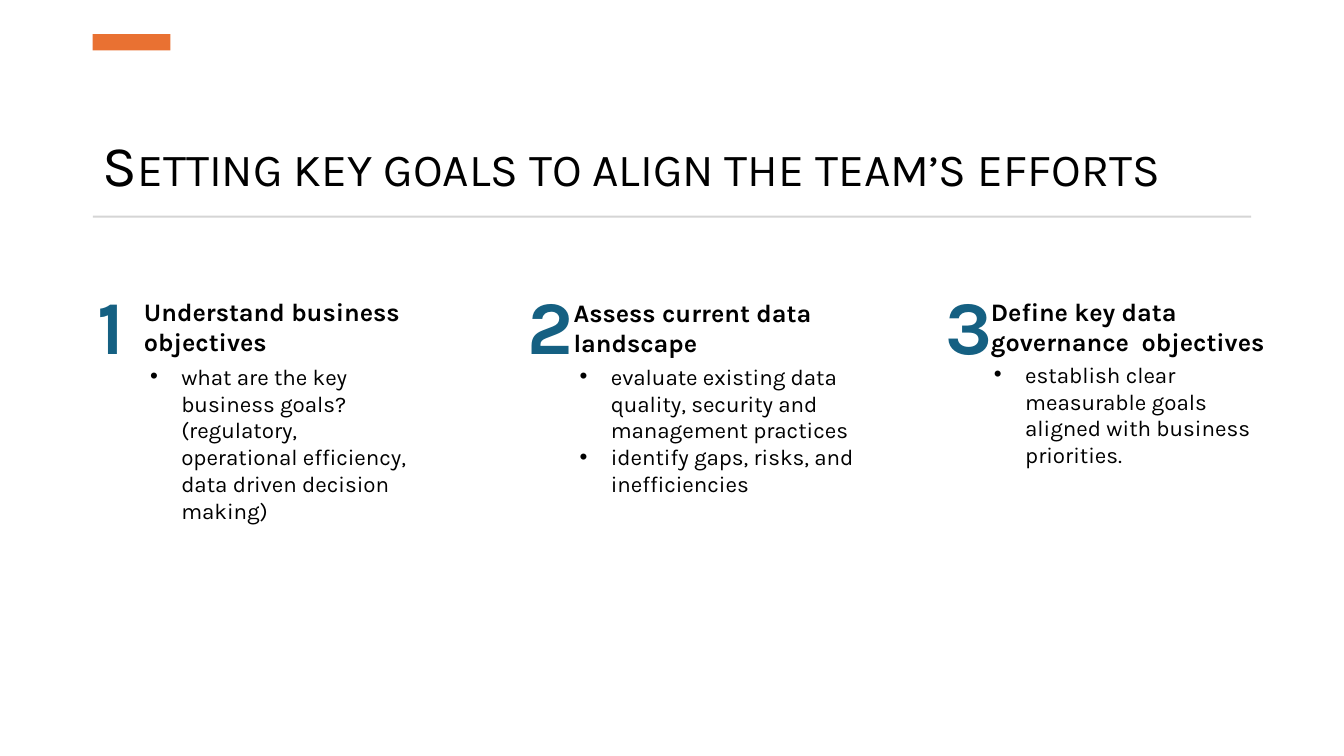
from pptx import Presentation
from pptx.dml.color import RGBColor as RGB
from pptx.enum.shapes import MSO_SHAPE as SHAPE
from pptx.enum.text import MSO_ANCHOR as ANCHOR
from pptx.oxml.ns import qn
from pptx.util import Inches, Pt
from lxml import etree

COLORS = {"text": "000000", "number": "156082", "accent": "E97132", "rule": "D5D5D5"}

# number left, heading (left, top, width), bullets (left, top, width, height)
GOALS = [
    (0.87, (1.33, 2.89, 3.8), "Understand business objectives", (0.89, 3.55, 3.33, 1.45),
     ["what are the key business goals? (regulatory, operational efficiency, "
      "data driven decision making)"]),
    (5.13, (5.59, 2.9, 3.69), "Assess current data landscape", (5.15, 3.55, 3.8, 1.45),
     ["evaluate existing data quality, security and management practices",
      "identify gaps, risks, and inefficiencies"]),
    (9.28, (9.73, 2.89, 3.19), "Define key data governance  objectives",
     (9.26, 3.53, 3.52, 0.91),
     ["establish clear measurable goals aligned with business priorities."]),
]


class SlideBuilder:
    font = "Karla"

    def __init__(self, slide):
        self.s = slide

    def bar(self, x, y, w, h, color):
        sp = self.s.shapes.add_shape(SHAPE.RECTANGLE, *map(Inches, (x, y, w, h)))
        sp.shadow.inherit = False
        sp.fill.solid()
        sp.fill.fore_color.rgb = RGB.from_string(COLORS[color])
        sp.line.fill.background()

    def text(self, x, y, w, h, paragraphs, size, color="text", bold=False):
        """Add a wrapped text box with one run per paragraph; return its frame."""
        tf = self.s.shapes.add_textbox(*map(Inches, (x, y, w, h))).text_frame
        tf.word_wrap = True
        for i, words in enumerate(paragraphs):
            p = tf.paragraphs[0] if i == 0 else tf.add_paragraph()
            r = p.add_run()
            r.text = words
            r.font.name = self.font
            r.font.size = Pt(size)
            r.font.bold = bold
            r.font.color.rgb = RGB.from_string(COLORS[color])
        return tf

    def title(self, x, y, w, h, words):
        tf = self.text(x, y, w, h, [words], 41)
        tf.vertical_anchor = ANCHOR.BOTTOM
        p = tf.paragraphs[0]
        p.line_spacing = 0.9
        p.runs[0].font._element.set("cap", "small")

    def bullets(self, x, y, w, h, items):
        tf = self.text(x, y, w, h, items, 16)
        for p in tf.paragraphs:
            p.level = 1
            pPr = p._p.get_or_add_pPr()
            pPr.set("marL", str(Inches(0.81)))
            pPr.set("indent", str(Inches(-0.31)))
            etree.SubElement(pPr, qn("a:buFont"), typeface="Arial")
            etree.SubElement(pPr, qn("a:buChar"), char="•")

    def goal(self, number, number_left, heading_at, heading, bullets_at, items):
        self.text(number_left, 2.72, 0.91, 1.01, [str(number)], 54, "number", True)
        self.text(*heading_at, 0.71, [heading], 18, bold=True)
        self.bullets(*bullets_at, items)


def main():
    prs = Presentation()
    prs.slide_width, prs.slide_height = Inches(13.33), Inches(7.5)
    b = SlideBuilder(prs.slides.add_slide(prs.slide_layouts[6]))
    b.title(0.92, 0.75, 11.49, 1.27, "Setting key goals to align the team’s efforts")
    b.bar(0.92, 0.34, 0.77, 0.16, "accent")
    b.bar(0.92, 2.14, 11.49, 0.02, "rule")
    for number, goal in enumerate(GOALS, 1):
        b.goal(number, *goal)
    prs.save("out.pptx")


if __name__ == "__main__":
    main()
